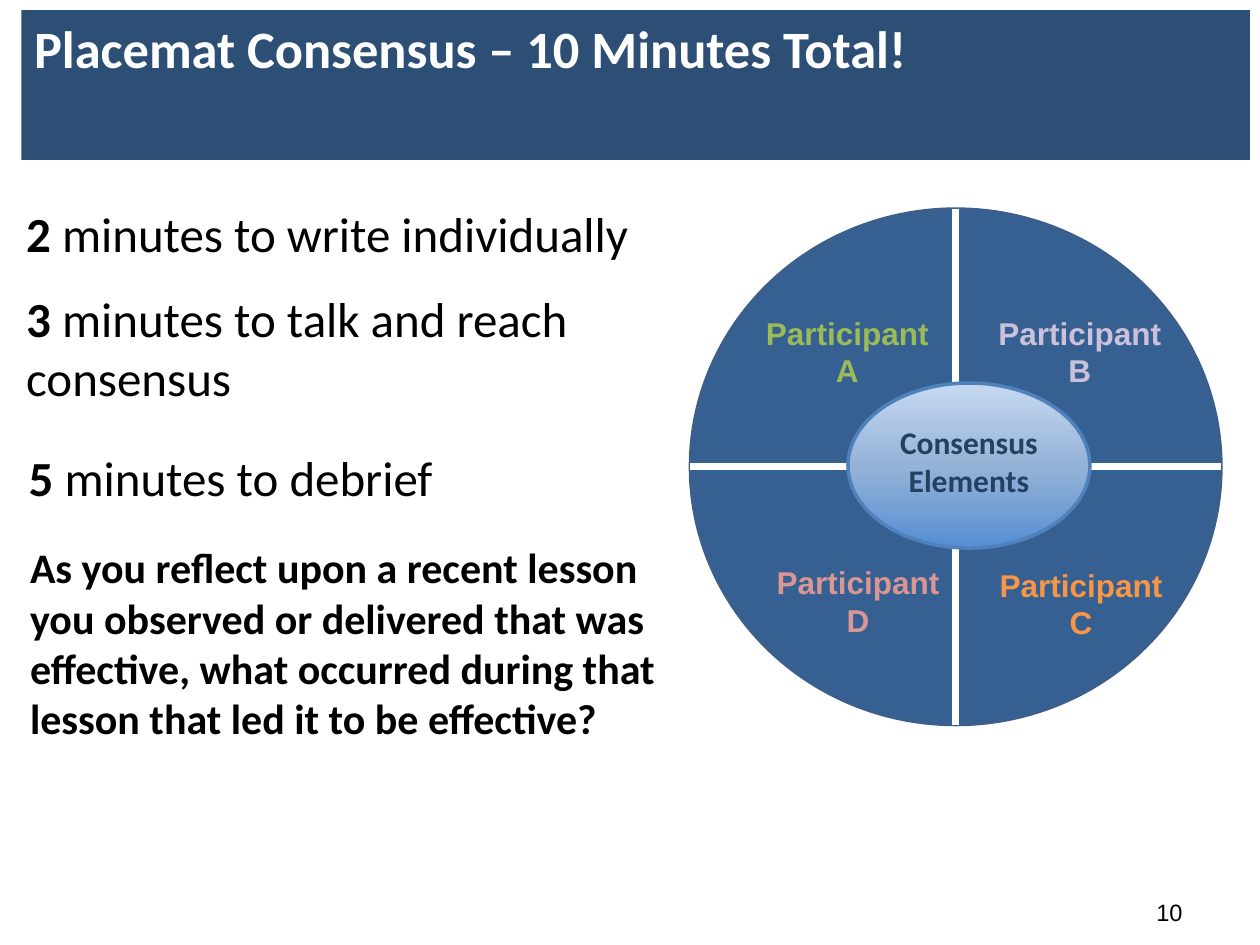
from copy import deepcopy
from dataclasses import dataclass

from pptx import Presentation
from pptx.dml.color import RGBColor
from pptx.enum.shapes import MSO_CONNECTOR, MSO_SHAPE
from pptx.enum.text import MSO_ANCHOR, PP_ALIGN
from pptx.oxml.ns import qn
from pptx.util import Inches, Pt

LEFT, CENTER = PP_ALIGN.LEFT, PP_ALIGN.CENTER
TOP = MSO_ANCHOR.TOP
OVAL = MSO_SHAPE.OVAL
STRAIGHT = MSO_CONNECTOR.STRAIGHT
TITLE_ONLY = 5


@dataclass(frozen=True)
class Theme:
    body_font: str = "Calibri"
    label_font: str = "Arial"
    title_size: float = 30
    step_size: float = 28
    question_size: float = 24
    label_size: float = 18
    number_size: float = 13.5
    text: str = "000000"
    white: str = "FFFFFF"
    banner: str = "2D4E75"
    mat: str = "376092"
    mat_line: str = "3A5F8C"
    center_stops: tuple = ("C6D9F1", "95B3D7", "558ED5")
    center_line: str = "4F81BD"
    center_text: str = "254061"
    participant_a: str = "9BBB59"
    participant_b: str = "CCC1DA"
    participant_c: str = "F79646"
    participant_d: str = "D99694"


class SlideBuilder:
    def __init__(self, slide, theme):
        self.slide = slide
        self.theme = theme

    def format_font(self, font, name, size, color, bold=None):
        font.name, font.size, font.bold = name, Pt(size), bold
        font.color.rgb = RGBColor.from_string(color)

    def title(self, text, left, top, width, height):
        shape = self.slide.shapes.title
        shape.left, shape.top = Inches(left), Inches(top)
        shape.width, shape.height = Inches(width), Inches(height)
        shape.fill.solid()
        shape.fill.fore_color.rgb = RGBColor.from_string(self.theme.banner)
        frame = shape.text_frame
        frame.text = text
        frame.vertical_anchor = TOP
        paragraph = frame.paragraphs[0]
        paragraph.alignment = LEFT
        self.format_font(paragraph.font, self.theme.body_font,
                         self.theme.title_size, self.theme.white, True)

    def text(self, lines, box, font, size, color, bold=None,
             alignment=LEFT, wrap=True, parent=None):
        """Add one paragraph per line; return the text frame."""
        shapes = (parent or self.slide).shapes
        frame = shapes.add_textbox(*map(Inches, box)).text_frame
        frame.word_wrap = wrap
        frame.text = "\n".join(lines)
        for paragraph in frame.paragraphs:
            paragraph.alignment = alignment
            self.format_font(paragraph.font, font, size, color, bold)
        return frame

    def step(self, minutes, task, box):
        frame = self.text([minutes], box, self.theme.body_font,
                          self.theme.step_size, self.theme.text)
        paragraph = frame.paragraphs[0]
        paragraph.runs[0].font.bold = True
        paragraph.add_run().text = f" minutes to {task}"

    def label(self, lines, box, font, color, parent=None):
        self.text(lines, box, font, self.theme.label_size, color, True,
                  CENTER, parent=parent)

    def oval(self, box, line_color, parent=None):
        shapes = (parent or self.slide).shapes
        shape = shapes.add_shape(OVAL, *map(Inches, box))
        shape.shadow.inherit = False
        shape.line.color.rgb = RGBColor.from_string(line_color)
        shape.line.width = Pt(2)
        return shape

    def mat(self, box):
        shape = self.oval(box, self.theme.mat_line)
        shape.fill.solid()
        shape.fill.fore_color.rgb = RGBColor.from_string(self.theme.mat)

    def divider(self, start, end):
        line = self.slide.shapes.add_connector(
            STRAIGHT, *map(Inches, (*start, *end)))
        line.line.color.rgb = RGBColor.from_string(self.theme.white)
        line.line.width = Pt(4)
        properties = line._element.spPr
        properties.append(properties.makeelement(qn("a:effectLst"), {}))

    def center(self, lines, oval_box, text_box):
        group = self.slide.shapes.add_group_shape()
        shape = self.oval(oval_box, self.theme.center_line, group)
        shape.fill.gradient()
        shape.fill.gradient_angle = 270
        stop_list = shape._element.spPr.find(".//" + qn("a:gsLst"))
        stop_list.insert(1, deepcopy(stop_list[0]))
        stops = zip(shape.fill.gradient_stops, self.theme.center_stops)
        for index, (stop, color) in enumerate(stops):
            stop.position = index / 2
            stop.color.rgb = RGBColor.from_string(color)
        self.label(lines, text_box, self.theme.body_font,
                   self.theme.center_text, group)


def main():
    presentation = Presentation()
    presentation.slide_width, presentation.slide_height = Inches(10), Inches(7.5)
    slide = presentation.slides.add_slide(presentation.slide_layouts[TITLE_ONLY])
    theme = Theme()
    builder = SlideBuilder(slide, theme)

    builder.title("Placemat Consensus – 10 Minutes Total!", 0.17, 0.08, 9.75, 1.19)

    steps = [
        ("2", "write individually", (0.11, 1.57, 5.6, 0.57)),
        ("3", "talk and reach consensus", (0.11, 2.24, 5.14, 1.04)),
        ("5", "debrief", (0.13, 3.5, 4.66, 0.57)),
    ]
    for minutes, task, box in steps:
        builder.step(minutes, task, box)

    left, top, width, height = mat_box = (5.48, 1.66, 4.21, 4.09)
    middle_x, middle_y = left + width / 2, top + height / 2
    builder.mat(mat_box)
    participants = [
        (["Participant A"], (5.94, 2.44, 1.57, 0.71), theme.participant_a),
        (["Participant B"], (7.74, 2.44, 1.66, 0.71), theme.participant_b),
        (["Participant", "C"], (7.54, 4.44, 2.08, 0.71), theme.participant_c),
        (["Participant D"], (6, 4.42, 1.62, 0.71), theme.participant_d),
    ]
    for lines, box, color in participants:
        builder.label(lines, box, theme.label_font, color)
    builder.divider((middle_x, top), (middle_x, top + height))
    builder.divider((left, middle_y), (left + width, middle_y))
    builder.center(["Consensus Elements"], (6.73, 3.04, 1.92, 1.31),
                   (6.9, 3.31, 1.58, 0.71))

    builder.text(
        ["As you reflect upon a recent lesson you observed or delivered that was "
         "effective, what occurred during that lesson that led it to be effective?"],
        (0.14, 4.25, 5.58, 1.72), theme.body_font, theme.question_size,
        theme.text, True)
    builder.text(["10"], (9.08, 7.08, 0.43, 0.33), theme.label_font,
                 theme.number_size, theme.text, wrap=False)

    presentation.save("out.pptx")


if __name__ == "__main__":
    main()
